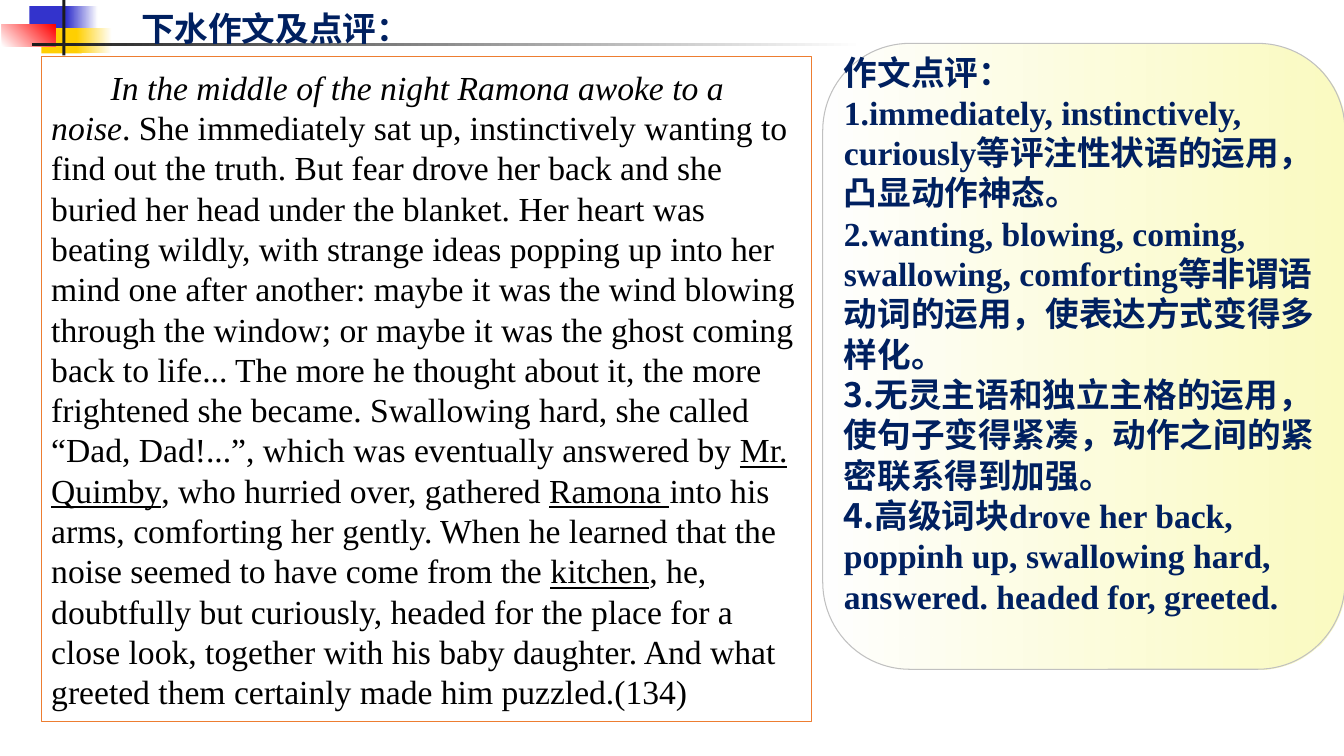
import pptx
import pptx.dml.color
import pptx.enum.shapes
import pptx.enum.text
import pptx.oxml
import pptx.oxml.ns
import pptx.util

Inches = pptx.util.Inches
Pt = pptx.util.Pt
SHAPE = pptx.enum.shapes.MSO_SHAPE
ANCHOR = pptx.enum.text.MSO_ANCHOR
ALIGN = pptx.enum.text.PP_ALIGN

COLORS = {
    "white": "FFFFFF", "black": "000000", "navy": "002060", "orange": "ED7D31",
    "blue": "3333CC", "gold": "FFCF01", "red": "FF0000", "ink": "1C1C1C",
    "cream": "FBFBBB", "silver": "C0C0C0",
}
LATIN = "Times New Roman"
CHINESE = "Noto Sans CJK SC"
TEXT_SIZE = Pt(24)
LINE_PITCH = Pt(28.8)

TITLE = "下水作文及点评："
ESSAY = [
    ("In the middle of the night Ramona awoke to a noise", "italic"),
    (". She immediately sat up, instinctively wanting to find out the truth. "
     "But fear drove her back and she buried her head under the blanket. "
     "Her heart was beating wildly, with strange ideas popping up into her mind "
     "one after another: maybe it was the wind blowing through the window; "
     "or maybe it was the ghost coming back to life... The more he thought about it, "
     "the more frightened she became. Swallowing hard, she called “Dad, Dad!...”, "
     "which was eventually answered by ", None),
    ("Mr. Quimby", "underline"),
    (", who hurried over, gathered ", None),
    ("Ramona ", "underline"),
    ("into his arms, comforting her gently. When he learned that the noise seemed "
     "to have come from the ", None),
    ("kitchen", "underline"),
    (", he, doubtfully but curiously, headed for the place for a close look, "
     "together with his baby daughter. And what greeted them certainly made him "
     "puzzled.(134)", None),
]
COMMENTS = [
    [("作文点评：", LATIN)],
    [("1.immediately, instinctively, curiously等评注性状语的运用，凸显动作神态。", LATIN)],
    [("2.wanting, blowing, coming, swallowing, comforting", LATIN),
     ("等非谓语动词的运用，使表达方式变得多样化。", CHINESE)],
    [("3.无灵主语和独立主格的运用，使句子变得紧凑，动作之间的紧密联系得到加强。", CHINESE)],
    [("4.高级词块", CHINESE),
     ("drove her back, poppinh up, swallowing hard, answered. headed for, greeted.", LATIN)],
]
ORNAMENT = [
    ((0.29, 0.06, 0.41, 0.25), ("blue",), 0),
    ((0.66, 0.06, 0.31, 0.25), ("blue", "white"), 0),
    ((0.41, 0.28, 0.4, 0.25), ("gold",), 0),
    ((0.76, 0.28, 0.35, 0.25), ("gold", "white"), 0),
    ((0.02, 0.24, 0.53, 0.22), ("white", "red"), 45),
    ((0.62, 0, 0.03, 0.55), ("ink",), 0),
    ((0.32, 0.43, 8.24, 0.03), ("ink", "white"), 0),
]


def rgb(name):
    return pptx.dml.color.RGBColor.from_string(COLORS[name])


def add_block(slide, kind, place, fills, angle=0, line=None, width=1):
    shape = slide.shapes.add_shape(kind, *map(Inches, place))
    shape.shadow.inherit = False
    if len(fills) == 1:
        shape.fill.solid()
        shape.fill.fore_color.rgb = rgb(fills[0])
    else:
        shape.fill.gradient()
        shape.fill.gradient_angle = angle
        for stop, name in zip(shape.fill.gradient_stops, fills):
            stop.color.rgb = rgb(name)
    if line:
        shape.line.color.rgb = rgb(line)
        shape.line.width = Pt(width)
    else:
        shape.line.fill.background()
    return shape


def set_frame(shape, anchor, wrap=True):
    frame = shape.text_frame
    frame.auto_size = pptx.enum.text.MSO_AUTO_SIZE.NONE
    frame.word_wrap = wrap
    frame.vertical_anchor = anchor
    frame.margin_left = frame.margin_right = Inches(0.1)
    frame.margin_top = frame.margin_bottom = Inches(0.05)
    return frame


def set_paragraph(para, indent=0.0):
    para.alignment = ALIGN.LEFT
    para.line_spacing = LINE_PITCH
    para.space_before = para.space_after = Pt(0)
    properties = para._p.get_or_add_pPr()
    properties.set("marL", "0")
    properties.set("indent", str(Inches(indent)))
    properties.append(pptx.oxml.parse_xml(
        "<a:buNone %s/>" % pptx.oxml.ns.nsdecls("a")))


def add_span(para, text, color, face=LATIN, bold=False):
    span = para.add_run()
    span.text = text
    span.font.size = TEXT_SIZE
    span.font.bold = bold
    span.font.name = face
    span.font.color.rgb = rgb(color)
    span._r.get_or_add_rPr().append(pptx.oxml.parse_xml(
        '<a:ea %s typeface="%s"/>' % (pptx.oxml.ns.nsdecls("a"), CHINESE)))
    return span


def place_on_top(slide, shape, place):
    shape.left, shape.top, shape.width, shape.height = map(Inches, place)
    slide.shapes._spTree.append(shape._element)


def add_essay(slide):
    box = add_block(slide, SHAPE.RECTANGLE, (0.41, 0.56, 7.64, 6.6),
                    ("white",), line="orange")
    para = set_frame(box, ANCHOR.MIDDLE).paragraphs[0]
    set_paragraph(para, indent=0.59)
    for text, style in ESSAY:
        span = add_span(para, text, "black")
        span.font.italic = style == "italic"
        span.font.underline = style == "underline"


def add_comments(slide):
    panel = add_block(slide, SHAPE.ROUNDED_RECTANGLE, (8.16, 0.43, 5.18, 6.21),
                      ("white", "cream"), line="silver", width=0.75)
    panel.adjustments[0] = 0.167
    cream = panel._element.spPr.findall(".//" + pptx.oxml.ns.qn("a:srgbClr"))[1]
    cream.append(pptx.oxml.parse_xml(
        '<a:alpha %s val="90000"/>' % pptx.oxml.ns.nsdecls("a")))
    body = slide.placeholders[1]
    place_on_top(slide, body, (8.27, 0.46, 5.06, 5.75))
    frame = set_frame(body, ANCHOR.TOP)
    for number, comment in enumerate(COMMENTS):
        para = frame.add_paragraph() if number else frame.paragraphs[0]
        set_paragraph(para)
        for text, face in comment:
            add_span(para, text, "navy", face, bold=True)


def add_title(slide):
    title = slide.shapes.title
    place_on_top(slide, title, (1.3, 0.03, 2.95, 0.5))
    para = set_frame(title, ANCHOR.TOP, wrap=False).paragraphs[0]
    set_paragraph(para)
    add_span(para, TITLE, "navy", bold=True)


def main():
    deck = pptx.Presentation()
    deck.slide_width = Inches(13.33)
    deck.slide_height = Inches(7.5)
    page = deck.slides.add_slide(deck.slide_layouts[1])
    add_essay(page)
    for place, fills, angle in ORNAMENT:
        add_block(page, SHAPE.RECTANGLE, place, fills, angle)
    add_comments(page)
    add_title(page)
    deck.save("out.pptx")


if __name__ == "__main__":
    main()
